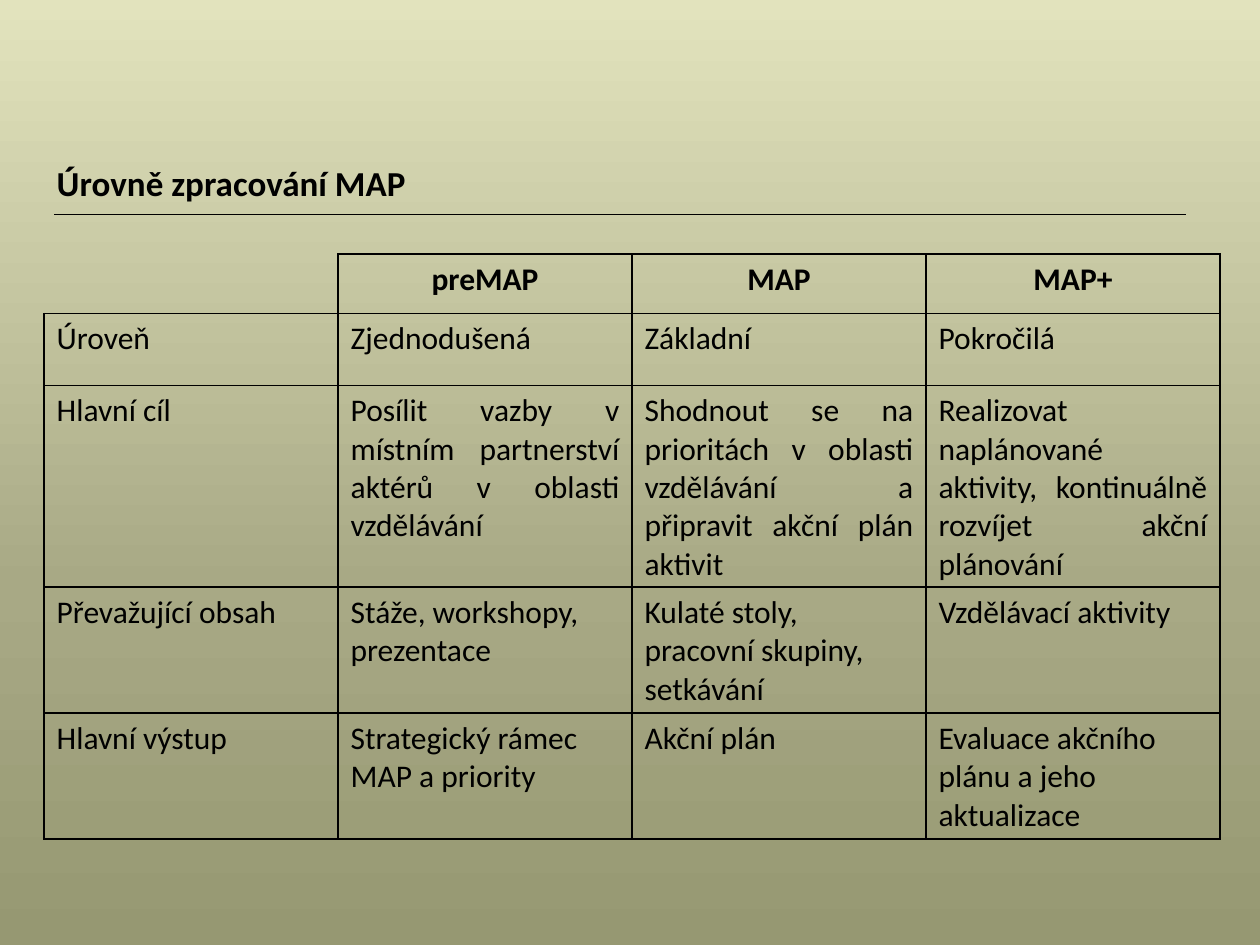
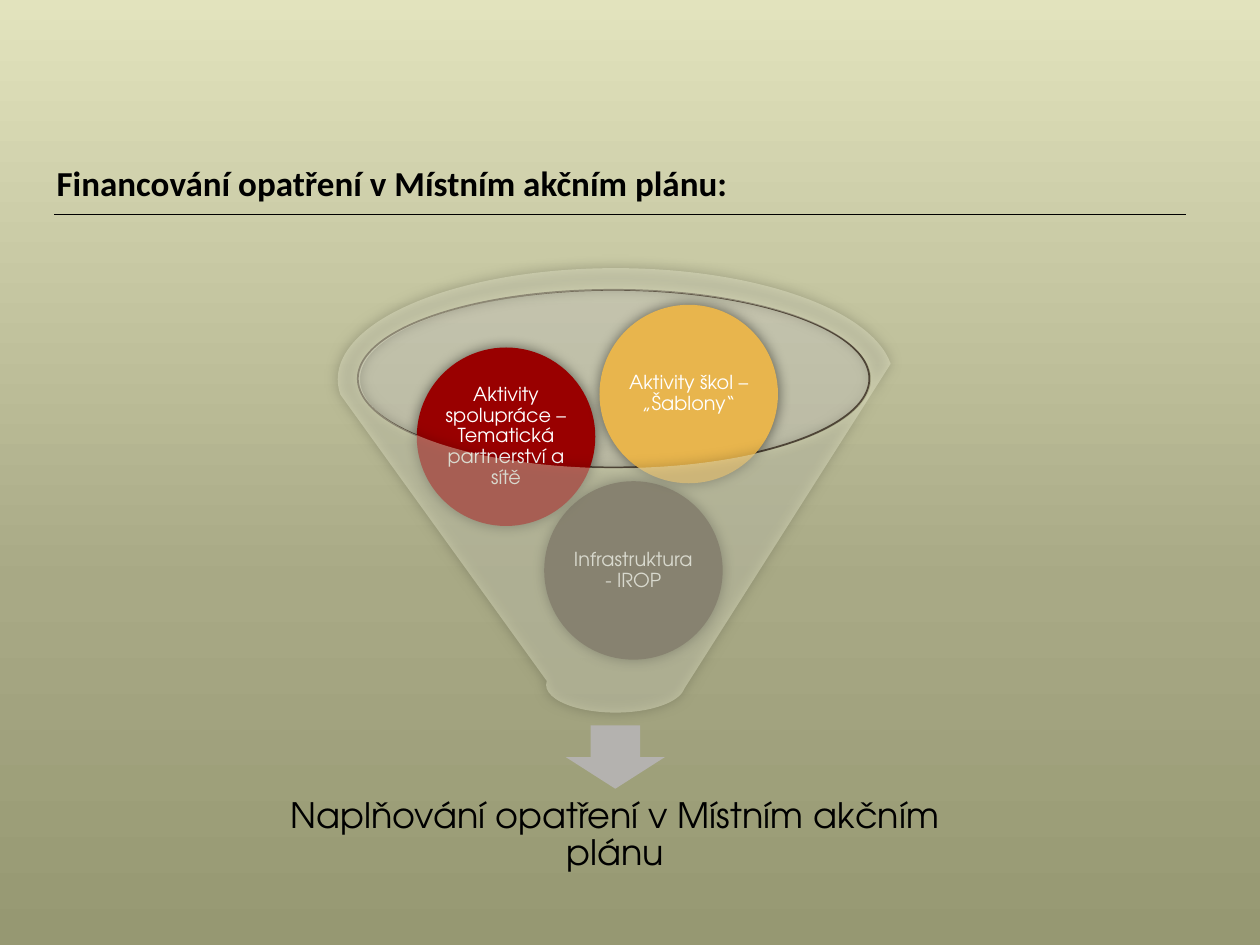
from copy import deepcopy
from dataclasses import dataclass
from typing import NamedTuple

from lxml.etree import SubElement
from pptx import Presentation
from pptx.dml.color import RGBColor
from pptx.enum.shapes import MSO_CONNECTOR, MSO_SHAPE
from pptx.enum.text import MSO_ANCHOR, MSO_AUTO_SIZE, PP_ALIGN
from pptx.oxml.ns import qn
from pptx.util import Pt


@dataclass(frozen=True)
class Theme:
    black: str = "000000"
    white: str = "FFFFFF"
    brown: str = "564B3C"
    red: str = "990000"
    gold: str = "E8B54D"
    grey: str = "B4B2AF"
    dish: str = "C3C1C0"
    cream: str = "ECEDD1"
    back: tuple = ((0, "E2E3BD"), (0.62, "A8A985"), (1, "969872"))
    plain: str = "Calibri"
    round: str = "TeX Gyre Adventor"
    head: float = 20
    cell: float = 18
    ball: float = 11
    thin: float = 0.75
    edge: float = 1
    blur: float = 7.5
    glass: int = 40
    shade: int = 50


class Box(NamedTuple):
    left: float
    top: float
    width: float
    height: float


class Ball(NamedTuple):
    left: float
    top: float
    color: str
    text: str


THEME = Theme()
TITLE = Box(25.2, 88.6, 669, 31.7)
GRID = Box(25.2, 145.2, 672, 334)
ROWS = (34, 41, 115, 72, 72)
CELLS = (
    ("", "preMAP", "MAP", "MAP+"),
    ("Úroveň", "Zjednodušená", "Základní", "Pokročilá"),
    ("Hlavní cíl",
     "Posílit vazby v místním partnerství aktérů v oblasti vzdělávání",
     "Shodnout se na prioritách v oblasti vzdělávání a připravit akční plán aktivit",
     "Realizovat naplánované aktivity, kontinuálně rozvíjet akční plánování"),
    ("Převažující obsah", "Stáže, workshopy, prezentace",
     "Kulaté stoly, pracovní skupiny, setkávání", "Vzdělávací aktivity"),
    ("Hlavní výstup", "Strategický rámec MAP a priority", "Akční plán",
     "Evaluace akčního plánu a jeho aktualizace"),
)
SIZE = 102
BALLS = (
    Ball(311, 275, THEME.brown, "Infrastruktura - IROP"),
    Ball(238.2, 198.6, THEME.red,
         "Aktivity spolupráce – Tematická partnerství a sítě"),
    Ball(342.6, 174.2, THEME.gold, "Aktivity škol – „Šablony“"),
)


def rgb(code: str) -> RGBColor:
    return RGBColor.from_string(code)


def place(box: Box) -> list:
    return [Pt(side) for side in box]


def write(frame, text: str, size: float, face: str, color: str,
          align=PP_ALIGN.LEFT, bold: bool = False, space: float = 1) -> None:
    par = frame.paragraphs[0]
    par.alignment = align
    par.line_spacing = space
    run = par.add_run()
    run.text = text
    font = run.font
    font.name, font.size, font.bold = face, Pt(size), bold
    font.color.rgb = rgb(color)


def inset(frame, gap: float) -> None:
    frame.word_wrap = True
    frame.vertical_anchor = MSO_ANCHOR.MIDDLE
    frame.margin_left = frame.margin_right = Pt(gap)
    frame.margin_top = frame.margin_bottom = Pt(gap)


def fade(node, share: int) -> None:
    SubElement(node, qn("a:alpha"), val=str(share * 1000))


def form(slide, kind, box: Box, color: str, glass: bool = False,
         edge: str = "", glow: bool = False):
    shape = slide.shapes.add_shape(kind, *place(box))
    shape.shadow.inherit = False
    shape.fill.solid()
    shape.fill.fore_color.rgb = rgb(color)
    props = shape.element.spPr
    if glass:
        fade(props.find(f"{qn('a:solidFill')}/{qn('a:srgbClr')}"), THEME.glass)
    if edge:
        shape.line.color.rgb = rgb(edge)
        shape.line.width = Pt(THEME.edge)
    else:
        shape.line.fill.background()
    if glow:
        cast = SubElement(props.find(qn("a:effectLst")), qn("a:outerShdw"),
                          blurRad=str(Pt(THEME.blur)), dist="0", dir="0",
                          rotWithShape="0")
        fade(SubElement(cast, qn("a:srgbClr"), val=THEME.black), THEME.shade)
    return shape


def paint(master) -> None:
    # Three-stop gradient shared through the master
    fill = master.background.fill
    fill.gradient()
    fill.gradient_angle = 270
    stops = master.element.find(f".//{qn('p:bg')}//{qn('a:gsLst')}")
    stops.append(deepcopy(stops[-1]))
    for stop, (spot, color) in zip(fill.gradient_stops, THEME.back):
        stop.position = spot
        stop.color.rgb = rgb(color)


def start(deck, text: str):
    # Title with the rule under it
    slide = deck.slides.add_slide(deck.slide_layouts[5])
    title = slide.shapes.title
    title.left, title.top, title.width, title.height = place(TITLE)
    frame = title.text_frame
    frame.word_wrap = True
    frame.auto_size = MSO_AUTO_SIZE.SHAPE_TO_FIT_TEXT
    write(frame, text, THEME.head, THEME.plain, THEME.black, bold=True)
    rule = slide.shapes.add_connector(
        MSO_CONNECTOR.STRAIGHT, Pt(31), Pt(122.4), Pt(677.5), Pt(122.4))
    rule.line.color.rgb = rgb(THEME.black)
    rule.line.width = Pt(THEME.thin)
    SubElement(rule.element.spPr, qn("a:effectLst"))
    return slide


def frame_cell(cell, bare: bool) -> None:
    # Borders come before the fill; the bare corner has no left or top line
    cell.fill.background()
    props = cell._tc.get_or_add_tcPr()
    for spot, side in enumerate("LRTB"):
        line = SubElement(props, qn(f"a:ln{side}"), w=str(Pt(THEME.edge)))
        props.insert(spot, line)
        if bare and side in "LT":
            SubElement(line, qn("a:noFill"))
        else:
            fill = SubElement(line, qn("a:solidFill"))
            SubElement(fill, qn("a:srgbClr"), val=THEME.black)


def levels(deck) -> None:
    slide = start(deck, "Úrovně zpracování MAP")
    table = slide.shapes.add_table(len(CELLS), len(CELLS[0]), *place(GRID)).table
    table.first_row = table.horz_banding = False
    for col in table.columns:
        col.width = Pt(GRID.width / len(CELLS[0]))
    for y, (row, high) in enumerate(zip(CELLS, ROWS)):
        table.rows[y].height = Pt(high)
        for x, text in enumerate(row):
            cell = table.cell(y, x)
            frame_cell(cell, bare=not text)
            if not text:
                continue
            align = PP_ALIGN.LEFT
            if y == 0:
                align = PP_ALIGN.CENTER
            elif y == 2 and x > 0:
                align = PP_ALIGN.JUSTIFY
            write(cell.text_frame, text, THEME.cell, THEME.plain, THEME.black,
                  align, bold=y == 0)


def funding(deck) -> None:
    slide = start(deck, "Financování opatření v Místním akčním plánu:")
    # Back of the funnel and the arrow below
    form(slide, MSO_SHAPE.OVAL, Box(204.5, 165.6, 292.3, 101.5), THEME.dish,
         glass=True, edge=THEME.brown)
    form(slide, MSO_SHAPE.DOWN_ARROW, Box(323.3, 414.5, 56.7, 36.2), THEME.grey)
    # Outcome
    note = slide.shapes.add_textbox(*place(Box(124.6, 443.5, 453.6, 68)))
    inset(note.text_frame, 11.5)
    write(note.text_frame, "Naplňování opatření v Místním akčním plánu",
          THEME.head, THEME.round, THEME.black, PP_ALIGN.CENTER, space=0.9)
    # Sources of money
    for ball in BALLS:
        shape = form(slide, MSO_SHAPE.OVAL, Box(ball.left, ball.top, SIZE, SIZE),
                     ball.color, glow=True)
        inset(shape.text_frame, 1.4)
        write(shape.text_frame, ball.text, THEME.ball, THEME.round, THEME.white,
              PP_ALIGN.CENTER, space=0.9)
    # Glass front
    form(slide, MSO_SHAPE.FUNNEL, Box(193, 153.2, 317.5, 254), THEME.cream,
         glass=True, glow=True)


def main() -> None:
    deck = Presentation()
    deck.slide_width, deck.slide_height = Pt(720), Pt(540)
    paint(deck.slide_master)
    levels(deck)
    funding(deck)
    deck.save("out.pptx")


if __name__ == "__main__":
    main()
